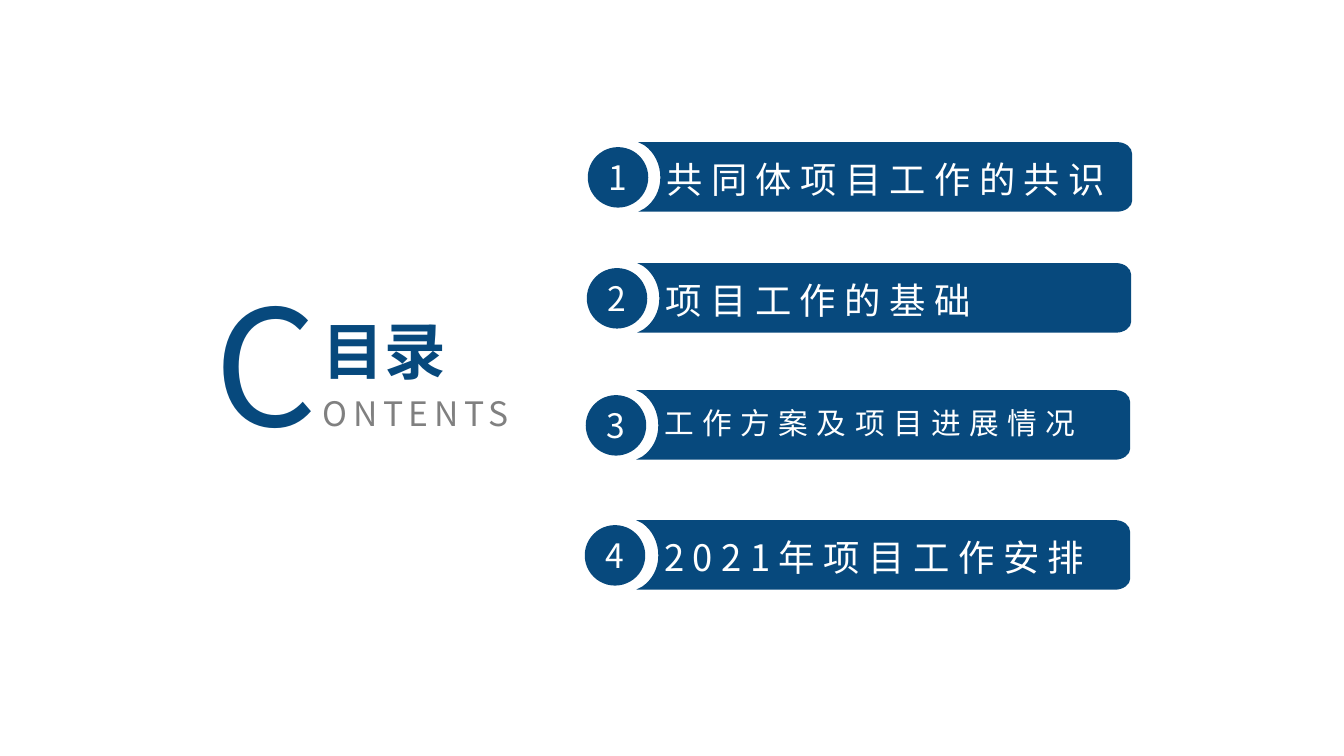
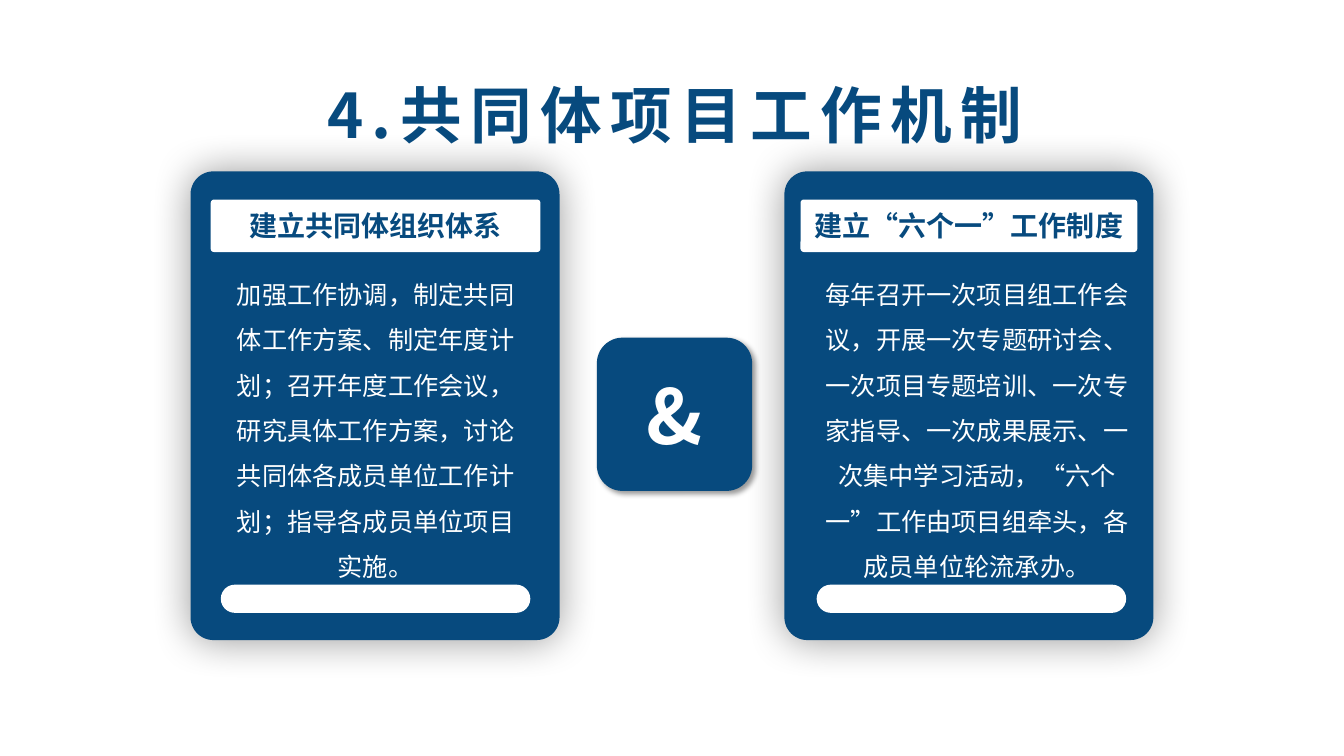
from dataclasses import dataclass

from lxml import etree
from pptx import Presentation
from pptx.dml.color import RGBColor
from pptx.enum.shapes import MSO_SHAPE as Geo
from pptx.enum.text import MSO_ANCHOR as Anchor, MSO_AUTO_SIZE as AutoSize, PP_ALIGN as Align
from pptx.oxml.ns import qn
from pptx.shapes.autoshape import Shape
from pptx.shapes.shapetree import GroupShapes, SlideShapes
from pptx.slide import Slide
from pptx.util import Emu, Pt

PX = 9144
FONT = "Noto Sans CJK SC"
NAVY = RGBColor(0x07, 0x49, 0x7D)
BLUE = RGBColor(0x07, 0x4A, 0x7E)
GREY = RGBColor(0x80, 0x80, 0x80)
WHITE = RGBColor(0xFF, 0xFF, 0xFF)
CARD_RADIUS = 0.062


@dataclass(frozen=True)
class Box:
    x: int
    y: int
    w: int
    h: int

    def emu(self) -> tuple[Emu, ...]:
        return tuple(px(v) for v in (self.x, self.y, self.w, self.h))


@dataclass(frozen=True)
class Run:
    text: str
    size: float
    color: RGBColor
    bold: bool = False
    spacing: int = 0


@dataclass(frozen=True)
class Shadow:
    blur: int
    distance: int
    angle: int
    alpha: int = 40


@dataclass(frozen=True)
class Topic:
    text: str
    badge_x: int
    banner_x: int
    top: int
    size: float = 26
    line_spacing: float = 1.1


@dataclass(frozen=True)
class Card:
    x: int
    header: str
    header_box: Box
    foot_x: int
    body: str
    body_box: Box


TOPICS = [
    Topic("共同体项目工作的共识", 583, 633, 141, 25.9),
    Topic("项目工作的基础", 582, 632, 261),
    Topic("工作方案及项目进展情况", 581, 631, 387, 21.2, 0.9),
    Topic("2021年项目工作安排", 580, 631, 516),
]

CARDS = [
    Card(189, "建立共同体组织体系", Box(209, 198, 327, 52), 219,
         "加强工作协调，制定共同体工作方案、制定年度计划；召开年度工作会议，"
         "研究具体工作方案，讨论共同体各成员单位工作计划；指导各成员单位项目实施。",
         Box(219, 257, 307, 323)),
    Card(778, "建立“六个一”工作制度", Box(794, 198, 334, 52), 810,
         "每年召开一次项目组工作会议，开展一次专题研讨会、一次项目专题培训、"
         "一次专家指导、一次成果展示、一次集中学习活动，“六个一”工作由项目组牵头，"
         "各成员单位轮流承办。",
         Box(802, 257, 334, 328)),
]

BANNER_PARTS = [
    [(475, 0)],
    [(483, 0), (490, 5), (490, 12)],
    [(490, 58)],
    [(490, 64), (483, 69), (475, 69)],
    [(0, 69)],
    [(6, 66)],
    [(16, 59), (22, 48), (22, 35)],
    [(22, 22), (16, 10), (6, 3)],
]


def px(value: int) -> Emu:
    return Emu(value * PX)


def write(shape: Shape, runs: list[Run], align: Align = Align.CENTER,
          line_spacing: float = 1.0, anchor: Anchor = Anchor.MIDDLE) -> None:
    tf = shape.text_frame
    tf.word_wrap = True
    tf.vertical_anchor = anchor
    p = tf.paragraphs[0]
    p.alignment = align
    p.line_spacing = line_spacing
    for run in runs:
        r = p.add_run()
        r.text = run.text
        r.font.size = Pt(run.size)
        r.font.bold = run.bold
        r.font.color.rgb = run.color
        r.font.name = FONT
        rPr = r.font._element
        etree.SubElement(rPr, qn("a:ea"), typeface=FONT)
        if run.spacing:
            rPr.set("spc", str(run.spacing * 100))


def paint(sp: Shape, fill: RGBColor) -> None:
    sp.fill.solid()
    sp.fill.fore_color.rgb = fill
    sp.line.fill.background()
    sp.shadow.inherit = False


def add_shape(shapes: SlideShapes | GroupShapes, geo: Geo, box: Box,
              fill: RGBColor, radius: float | None = None) -> Shape:
    sp = shapes.add_shape(geo, *box.emu())
    if radius is not None:
        sp.adjustments[0] = radius
    paint(sp, fill)
    return sp


def cast_shadow(sp: Shape, shadow: Shadow) -> None:
    effects = sp._element.spPr.find(qn("a:effectLst"))
    outer = etree.SubElement(
        effects, qn("a:outerShdw"), blurRad=str(Pt(shadow.blur)),
        dist=str(Pt(shadow.distance)), dir=str(shadow.angle * 60000),
        algn="ctr", rotWithShape="0")
    color = etree.SubElement(outer, qn("a:srgbClr"), val="000000")
    etree.SubElement(color, qn("a:alpha"), val=str(shadow.alpha * 1000))


def add_text(s: Slide, box: Box, runs: list[Run], align: Align = Align.CENTER,
             line_spacing: float = 1.0, anchor: Anchor = Anchor.MIDDLE) -> Shape:
    tb = s.shapes.add_textbox(*box.emu())
    write(tb, runs, align, line_spacing, anchor)
    return tb


def bend_corners(sp: Shape) -> None:
    segments = iter(list(sp._element.iter(qn("a:lnTo"))))
    for part in BANNER_PARTS:
        first, *others = [next(segments) for _ in part]
        if others:
            first.tag = qn("a:cubicBezTo")
            for segment in others:
                first.append(segment[0])
                segment.getparent().remove(segment)


def add_banner(s: Slide, x: int, y: int) -> Shape:
    builder = s.shapes.build_freeform(px(x), px(y), scale=1.0)
    builder.add_line_segments([(px(x + dx), px(y + dy))
                               for part in BANNER_PARTS for dx, dy in part])
    sp = builder.convert_to_shape()
    bend_corners(sp)
    paint(sp, NAVY)
    tf = sp.text_frame
    tf.margin_left = px(28)
    tf.margin_top = tf.margin_right = tf.margin_bottom = px(4)
    return sp


def add_badge(s: Slide, number: int, topic: Topic) -> None:
    badge = add_shape(s.shapes, Geo.OVAL, Box(topic.badge_x, topic.top + 5, 60, 60), NAVY)
    write(badge, [Run(str(number), 24, WHITE)])


def add_topic(s: Slide, topic: Topic) -> None:
    banner = add_banner(s, topic.banner_x, topic.top)
    write(banner, [Run(topic.text, topic.size, WHITE, spacing=6)],
          Align.LEFT, topic.line_spacing)


def add_card(s: Slide, card: Card) -> None:
    shapes = s.shapes.add_group_shape().shapes
    panel = add_shape(shapes, Geo.ROUNDED_RECTANGLE, Box(card.x, 170, 366, 465),
                      BLUE, CARD_RADIUS)
    cast_shadow(panel, Shadow(30, 0, 0))
    header = add_shape(shapes, Geo.ROUNDED_RECTANGLE, card.header_box, WHITE, CARD_RADIUS)
    write(header, [Run(card.header, 20, BLUE, bold=True)])
    add_shape(shapes, Geo.ROUNDED_RECTANGLE, Box(card.foot_x, 580, 307, 28), WHITE, 0.5)


def add_card_body(s: Slide, card: Card) -> None:
    body = add_text(s, card.body_box, [Run(card.body, 18, WHITE)],
                    line_spacing=1.5, anchor=Anchor.TOP)
    body.text_frame.auto_size = AutoSize.SHAPE_TO_FIT_TEXT


def build_contents(s: Slide) -> None:
    add_text(s, Box(203, 301, 488, 116),
             [Run("C", 115, NAVY, spacing=4), Run("ONTENTS", 24, GREY, spacing=4)],
             Align.LEFT)
    add_text(s, Box(310, 323, 201, 49), [Run("目录", 44, NAVY, bold=True)], Align.LEFT)
    for number, topic in enumerate(TOPICS, 1):
        add_badge(s, number, topic)
    for topic in TOPICS:
        add_topic(s, topic)


def build_mechanism(s: Slide) -> None:
    for card in CARDS:
        add_card(s, card)
    for card in CARDS:
        add_card_body(s, card)
    joint = add_shape(s.shapes, Geo.ROUNDED_RECTANGLE, Box(592, 335, 154, 152), BLUE)
    cast_shadow(joint, Shadow(4, 3, 45))
    write(joint, [Run("&", 54, WHITE, bold=True)])
    add_text(s, Box(304, 66, 731, 86),
             [Run("4.共同体项目工作机制", 44, BLUE, bold=True, spacing=6)], line_spacing=1.1)


def main() -> None:
    prs = Presentation()
    prs.slide_width, prs.slide_height = px(1333), px(750)
    for build in (build_contents, build_mechanism):
        build(prs.slides.add_slide(prs.slide_layouts[6]))
    prs.save("out.pptx")


if __name__ == "__main__":
    main()
